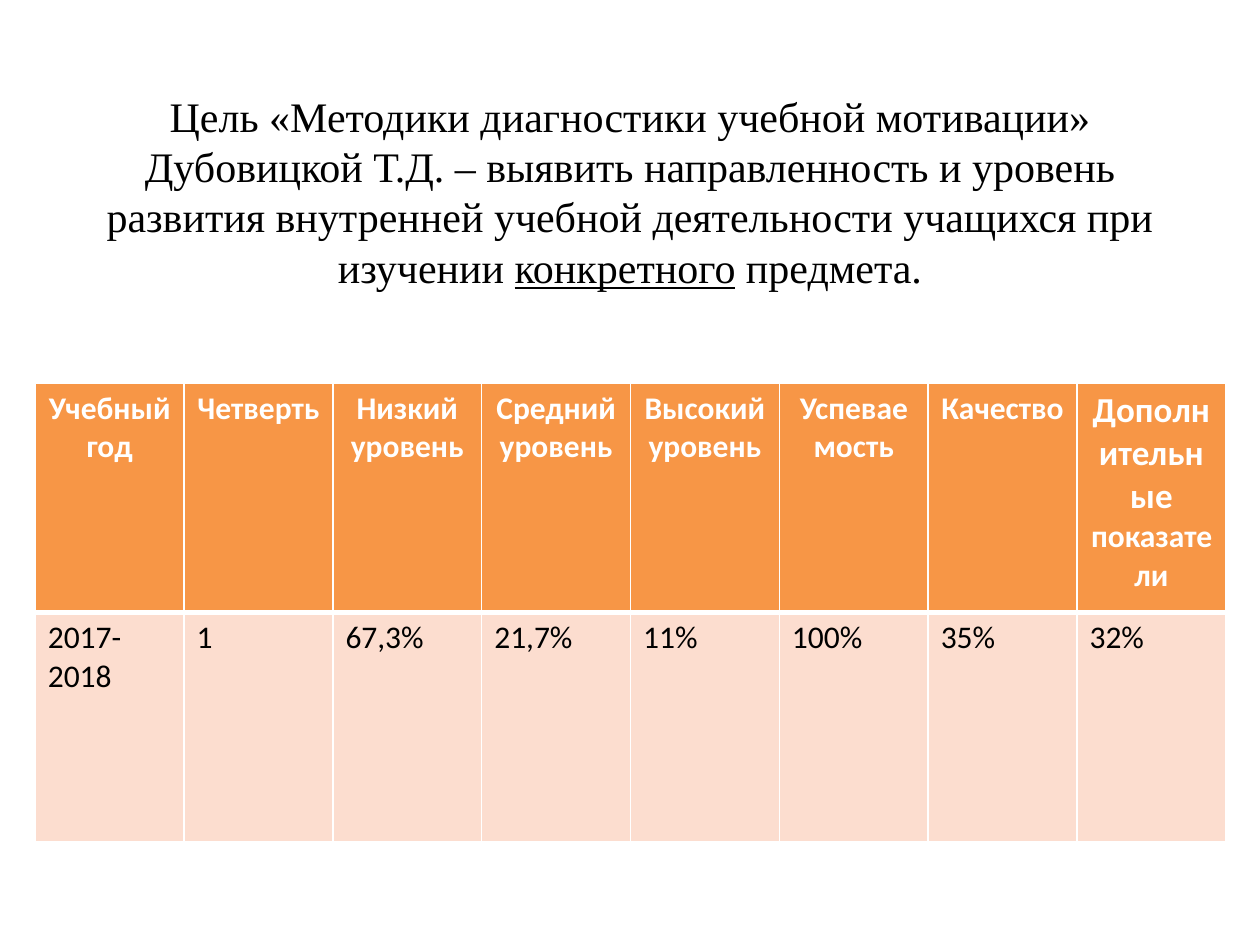
import pptx
import pptx.dml.color
import pptx.enum.text
import pptx.oxml
import pptx.oxml.ns
import pptx.util

RGBColor = pptx.dml.color.RGBColor
Inches, Pt = pptx.util.Inches, pptx.util.Pt
PP_ALIGN = pptx.enum.text.PP_ALIGN

BLACK = RGBColor(0x00, 0x00, 0x00)
WHITE = RGBColor(0xFF, 0xFF, 0xFF)
ORANGE = RGBColor(0xF7, 0x96, 0x46)
PEACH = RGBColor(0xFC, 0xDD, 0xCF)

# (text, underlined)
TITLE = [
    ("Цель «Методики диагностики учебной мотивации» Дубовицкой Т.Д. – выявить "
     "направленность и уровень развития внутренней учебной деятельности "
     "учащихся при изучении ", False),
    ("конкретного", True),
    (" предмета.", False),
]
# Each column: header runs as (text, size), then the value
COLUMNS = [
    ([("Учебный год", 18)], "2017- 2018"),
    ([("Четверть", 18)], "1"),
    ([("Низкий уровень", 18)], "67,3%"),
    ([("Средний уровень", 18)], "21,7%"),
    ([("Высокий уровень", 18)], "11%"),
    ([("Успеваемость", 18)], "100%"),
    ([("Качество", 18)], "35%"),
    ([("Дополнительные", 20), (" показатели", 18)], "32%"),
]
TABLE_LEFT, TABLE_TOP, TABLE_WIDTH, ROW_HEIGHT = 0.28, 3.04, 9.45, 1.82


def add_run(p, text, size, font, color, bold=False, underline=False):
    r = p.add_run()
    r.text = text
    r.font.size = Pt(size)
    r.font.name = font
    r.font.color.rgb = color
    r.font.bold = bold
    r.font.underline = underline


def set_borders(cell, **widths):
    """Draw white cell edges; widths in points are keyed L, R, T, B in that order."""
    tc_pr = cell._tc.get_or_add_tcPr()
    for i, (side, width) in enumerate(widths.items()):
        tc_pr.insert(i, pptx.oxml.parse_xml(
            f'<a:ln{side} {pptx.oxml.ns.nsdecls("a")} w="{Pt(width)}"><a:solidFill>'
            f'<a:srgbClr val="{WHITE}"/></a:solidFill></a:ln{side}>'))


def fill_cell(cell, runs, fill, color, header):
    cell.fill.solid()
    cell.fill.fore_color.rgb = fill
    p = cell.text_frame.paragraphs[0]
    p.alignment = PP_ALIGN.CENTER if header else PP_ALIGN.LEFT
    for text, size in runs:
        add_run(p, text, size, "Calibri", color, bold=header)
    # The line between header and values is the thick one
    set_borders(cell, L=1, R=1, T=1 if header else 3, B=3 if header else 1)


prs = pptx.Presentation()
prs.slide_width, prs.slide_height = Inches(10), Inches(7.5)
s = prs.slides.add_slide(prs.slide_layouts[5])

title = s.shapes.title
title.left, title.top = Inches(0.5), Inches(0.3)
title.width, title.height = Inches(9), Inches(2.43)
tf = title.text_frame
tf.word_wrap = True
tf.auto_size = pptx.enum.text.MSO_AUTO_SIZE.NONE
tf.vertical_anchor = pptx.enum.text.MSO_ANCHOR.MIDDLE
p = tf.paragraphs[0]
p.alignment = PP_ALIGN.CENTER
for text, underlined in TITLE:
    add_run(p, text, 24, "Times New Roman", BLACK, underline=underlined)

table = s.shapes.add_table(
    2, len(COLUMNS), Inches(TABLE_LEFT), Inches(TABLE_TOP),
    Inches(TABLE_WIDTH), Inches(2 * ROW_HEIGHT)).table
for col, (header_runs, value) in enumerate(COLUMNS):
    fill_cell(table.cell(0, col), header_runs, ORANGE, WHITE, header=True)
    fill_cell(table.cell(1, col), [(value, 18)], PEACH, BLACK, header=False)

prs.save("out.pptx")
